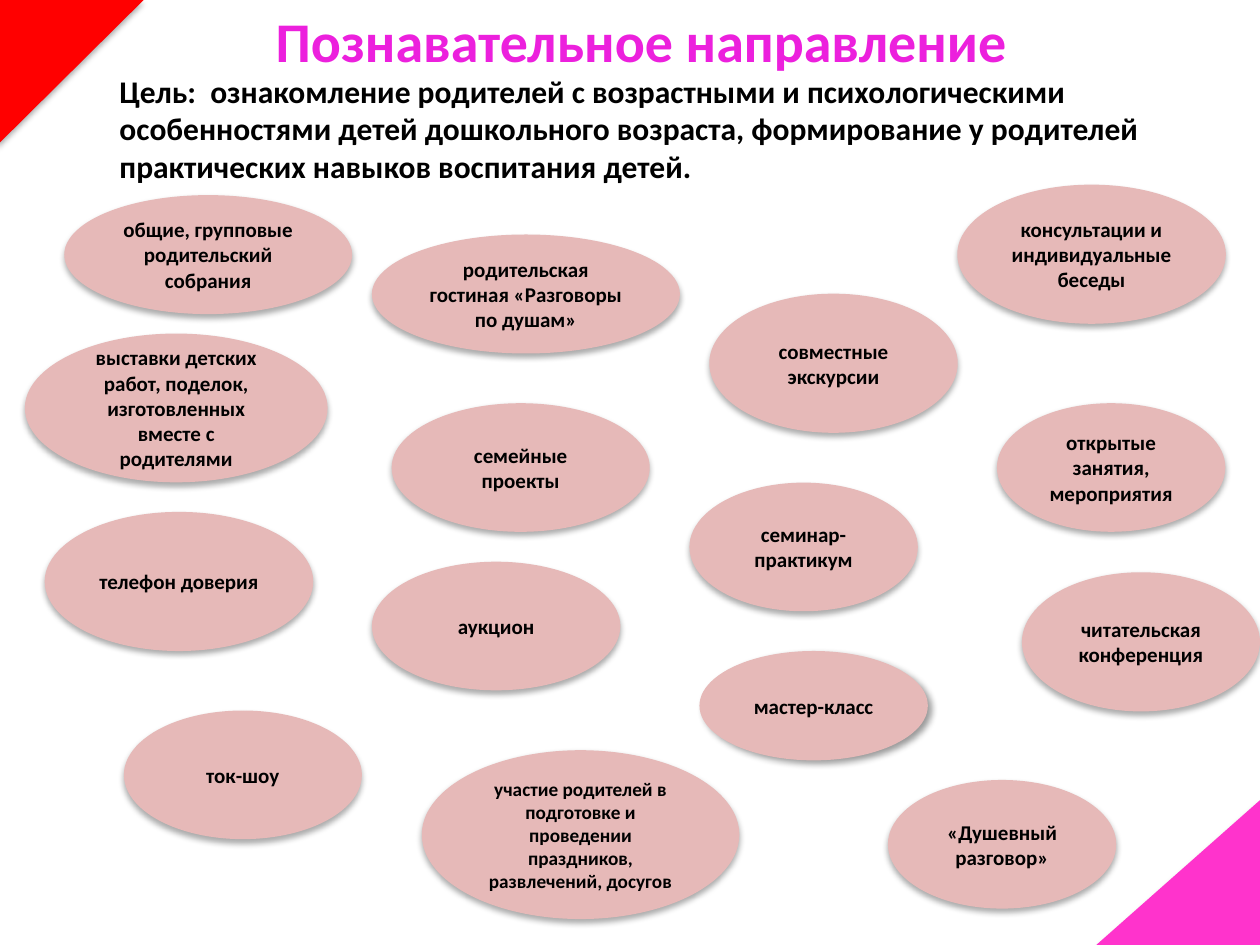
"""Build the slide on cognitive work with parents."""
from dataclasses import dataclass

from lxml.etree import SubElement
from pptx import Presentation
from pptx.dml.color import RGBColor as Color
from pptx.enum.shapes import MSO_SHAPE as Preset
from pptx.enum.text import MSO_ANCHOR as Anchor, PP_ALIGN as Align
from pptx.oxml.ns import qn
from pptx.util import Pt


@dataclass(frozen=True)
class Theme:
    """Colours, font and type sizes of the slide."""
    font: str = "Calibri"
    title: str = "EC20DD"
    ink: str = "000000"
    bubble: str = "E6B9B8"
    red: str = "FF0000"
    pink: str = "FF33CC"
    title_size: int = 32
    goal_size: int = 18
    bubble_size: int = 12
    small_size: int = 11


THEME = Theme()
SOFT_SHADOW = {"blur": 3.5, "distance": 2.2, "angle": 90, "opacity": 32}
SIDE_SHADOW = {"blur": 4, "distance": 3, "angle": 45, "opacity": 40}

TITLE = "Познавательное направление"
GOAL = ("Цель:  ознакомление родителей с возрастными и психологическими "
        "особенностями детей дошкольного возраста, формирование у родителей "
        "практических навыков воспитания детей.")

BUBBLES = [
    ("общие, групповые родительский собрания", (36.7, 111.5, 164.5, 68), {}),
    ("консультации и индивидуальные беседы", (547, 105.5, 153.5, 79.5), {}),
    ("родительская гостиная «Разговоры по душам»", (212.5, 134, 176, 68), {}),
    ("читательская конференция", (584, 327, 136, 79.5), {}),
    ("аукцион", (212.5, 321, 142, 73.5), {}),
    ("семинар-практикум", (394, 275.8, 130.5, 73.5), {}),
    ("ток-шоу", (70.8, 406, 136, 73.5), {}),
    ("мастер-класс", (399.7, 372, 130.5, 62.5), {"shadow": SIDE_SHADOW}),
    ("«Душевный разговор»", (507.4, 445.7, 130.5, 73.5), {}),
    ("выставки детских работ, поделок, изготовленных вместе с родителями",
     (14.2, 190.6, 173, 85), {}),
    ("участие родителей в подготовке и проведении праздников, развлечений, досугов",
     (241, 428.7, 181.5, 96.5), {"size": THEME.small_size}),
    ("совместные экскурсии", (405.3, 167.8, 142, 79.5), {}),
    ("открытые занятия, мероприятия", (569.7, 230.4, 130.5, 73.5), {}),
    ("телефон доверия", (25.5, 292.5, 153.5, 79.5), {}),
    ("семейные проекты", (223.8, 230.4, 147.5, 73.5), {}),
]


def apply_format(target, values):
    """Set every attribute named in values on the target."""
    for name, value in values.items():
        setattr(target, name, value)


def write_text(frame, text, size, color, align=Align.LEFT):
    """Write one bold paragraph into a text frame and return it."""
    frame.word_wrap = True
    para = frame.paragraphs[0]
    para.alignment = align
    span = para.add_run()
    span.text = text
    apply_format(span.font, {"name": THEME.font, "size": Pt(size), "bold": True})
    span.font.color.rgb = Color.from_string(color)
    return para


def add_text(page, text, place, size, color, indent=0):
    """Add a text box with an optional left indent."""
    box = page.shapes.add_textbox(*map(Pt, place))
    para = write_text(box.text_frame, text, size, color)
    if indent:
        para._p.get_or_add_pPr().set("marL", str(Pt(indent)))


def add_shadow(shape, blur, distance, angle, opacity):
    """Give a shape a black outer shadow."""
    shape.shadow.inherit = False
    effects = shape.element.spPr.find(qn("a:effectLst"))
    outer = SubElement(effects, qn("a:outerShdw"), {
        "blurRad": str(Pt(blur)), "dist": str(Pt(distance)),
        "dir": str(angle * 60000), "rotWithShape": "0"})
    tint = SubElement(outer, qn("a:srgbClr"), val=THEME.ink)
    SubElement(tint, qn("a:alpha"), val=str(opacity * 1000))


def add_filled(page, preset, place, color, shadow=SOFT_SHADOW):
    """Add a borderless preset shape with a solid fill and a shadow."""
    shape = page.shapes.add_shape(preset, *map(Pt, place))
    shape.fill.solid()
    shape.fill.fore_color.rgb = Color.from_string(color)
    shape.line.fill.background()
    add_shadow(shape, **shadow)
    return shape


def add_bubble(page, text, place, size=THEME.bubble_size, shadow=SOFT_SHADOW):
    """Add an ellipse with centred text."""
    bubble = add_filled(page, Preset.OVAL, place, THEME.bubble, shadow)
    bubble.text_frame.vertical_anchor = Anchor.MIDDLE
    write_text(bubble.text_frame, text, size, THEME.ink, Align.CENTER)


def add_corner(page, place, color, rotation=0):
    """Add a corner triangle, flipped upright and then rotated."""
    corner = add_filled(page, Preset.RIGHT_TRIANGLE, place, color)
    corner.rotation = rotation
    corner.element.spPr.xfrm.set("flipV", "1")


def main():
    """Build and save the deck."""
    deck = Presentation()
    apply_format(deck, {"slide_width": Pt(720), "slide_height": Pt(540)})
    page = deck.slides.add_slide(deck.slide_layouts[6])
    add_text(page, GOAL, (25.2, 37.4, 674.6, 203.8), THEME.goal_size,
             THEME.ink, indent=36)
    add_text(page, TITLE, (150.5, 0, 465, 46), THEME.title_size, THEME.title)
    for text, place, options in BUBBLES:
        add_bubble(page, text, place, **options)
    add_corner(page, (626.4, 457.2, 93.6, 82.8), THEME.pink, rotation=180)
    add_corner(page, (-1.4, 0, 83.5, 82.8), THEME.red)
    deck.save("out.pptx")


if __name__ == "__main__":
    main()
